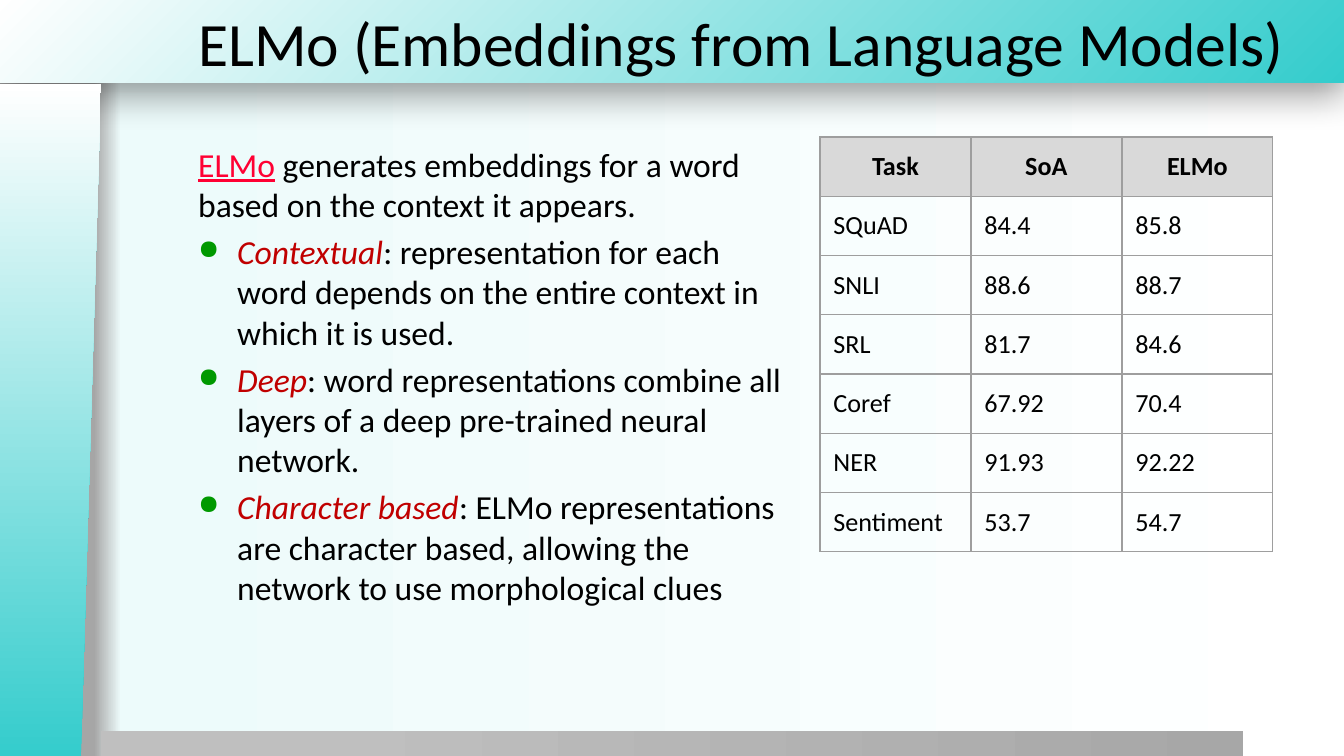
import dataclasses

import lxml.etree
import pptx
import pptx.dml.color
import pptx.enum.shapes
import pptx.enum.text
import pptx.oxml
import pptx.oxml.ns
import pptx.util

WIDE, HIGH = 1344, 756
SCALE = 9144000 / WIDE
NS = pptx.oxml.ns.nsdecls("a")
TAG = pptx.oxml.ns.qn
SHAPE = pptx.enum.shapes.MSO_SHAPE
ALIGN = pptx.enum.text.PP_ALIGN
ANCHOR = pptx.enum.text.MSO_ANCHOR


@dataclasses.dataclass(frozen=True)
class Theme:
    font: str = "Calibri"
    title: int = 33
    body: int = 18
    cell: int = 14
    gap: float = 3.6
    rule: float = 0.75
    ink: str = "000000"
    link: str = "FF0033"
    term: str = "C00000"
    dot: str = "009900"
    head: str = "D9D9D9"
    grid: str = "9E9E9E"
    teal: str = "34CCCC"
    white: str = "FFFFFF"
    mist: str = "EDFBFB"
    shade: str = "A6A6A6"
    base: tuple = ("BFBFBF", "A7A7A7")


THEME = Theme()

POINTS = [
    ("Contextual", ": representation for each word depends on the entire context in which it is used."),
    ("Deep", ": word representations combine all layers of a deep pre-trained neural network."),
    ("Character based", ": ELMo representations are character based, "
                        "allowing the network to use morphological clues"),
]

SCORES = [
    ("Task", "SoA", "ELMo"),
    ("SQuAD", "84.4", "85.8"),
    ("SNLI", "88.6", "88.7"),
    ("SRL", "81.7", "84.6"),
    ("Coref", "67.92", "70.4"),
    ("NER", "91.93", "92.22"),
    ("Sentiment", "53.7", "54.7"),
]


def px(count):
    return pptx.util.Emu(round(count * SCALE))


def box(*sides):
    return [px(side) for side in sides]


def color(code):
    return pptx.dml.color.RGBColor.from_string(code)


def add_xml(parent, text):
    parent.append(pptx.oxml.parse_xml(text))


def blend(owner, stops, corner=False):
    """Swap the owner's solid fill for a gradient, left to right or from the lower right corner."""
    marks = "".join(f'<a:gs pos="{spot * 1000}"><a:srgbClr val="{code}"/></a:gs>'
                    for spot, code in stops)
    course = ('<a:path path="circle"><a:fillToRect l="100000" t="100000"/></a:path>'
              if corner else '<a:lin ang="0" scaled="0"/>')
    fill = pptx.oxml.parse_xml(f'<a:gradFill {NS} rotWithShape="1"><a:gsLst>{marks}</a:gsLst>'
                               f'{course}</a:gradFill>')
    owner.replace(owner.find(TAG("a:solidFill")), fill)


def add_band(slide, kind, sides, stops, corner=False):
    band = slide.shapes.add_shape(kind, *box(*sides))
    band.shadow.inherit = False
    band.line.fill.background()
    band.fill.solid()
    blend(band._element.spPr, stops, corner)
    return band


def cast_shade(band):
    effects = band._element.spPr.find(TAG("a:effectLst"))
    add_xml(effects, f'<a:outerShdw {NS} blurRad="{pptx.util.Pt(20)}" dist="{pptx.util.Pt(6)}" '
                     f'dir="5400000" algn="t" rotWithShape="0"><a:srgbClr val="{THEME.ink}">'
                     '<a:alpha val="40000"/></a:srgbClr></a:outerShdw>')


def add_run(para, text, size, code=THEME.ink, **style):
    run = para.add_run()
    run.text = text
    run.font.name = THEME.font
    run.font.size = pptx.util.Pt(size)
    run.font.color.rgb = color(code)
    for name, value in style.items():
        setattr(run.font, name, value)


def add_text(slide, *sides, anchor=ANCHOR.TOP):
    frame = slide.shapes.add_textbox(*box(*sides)).text_frame
    frame.word_wrap = True
    frame.vertical_anchor = anchor
    return frame


def add_dot(para):
    props = para._p.get_or_add_pPr()
    props.set("marL", str(px(39)))
    props.set("indent", str(px(-39)))
    add_xml(props, f'<a:buClr {NS}><a:srgbClr val="{THEME.dot}"/></a:buClr>')
    add_xml(props, f'<a:buSzPct {NS} val="80000"/>')
    add_xml(props, f'<a:buChar {NS} char="●"/>')


def add_body(slide):
    frame = add_text(slide, 185, 137, 610, 568)
    lead = frame.paragraphs[0]
    lead.space_before = pptx.util.Pt(THEME.gap)
    add_run(lead, "ELMo", THEME.body, THEME.link, underline=True)
    add_run(lead, " generates embeddings for a word based on the context it appears.", THEME.body)
    for term, rest in POINTS:
        para = frame.add_paragraph()
        para.space_before = pptx.util.Pt(THEME.gap)
        add_dot(para)
        add_run(para, term, THEME.body, THEME.term, italic=True)
        add_run(para, rest, THEME.body)


def set_cell(cell, text, head):
    cell.vertical_anchor = ANCHOR.MIDDLE
    for side in ("lnL", "lnR", "lnT", "lnB"):
        add_xml(cell._tc.get_or_add_tcPr(),
                f'<a:{side} {NS} w="{pptx.util.Pt(THEME.rule)}"><a:solidFill>'
                f'<a:srgbClr val="{THEME.grid}"/></a:solidFill></a:{side}>')
    if head:
        cell.fill.solid()
        cell.fill.fore_color.rgb = color(THEME.head)
    else:
        cell.fill.background()
    para = cell.text_frame.paragraphs[0]
    para.alignment = ALIGN.CENTER if head else ALIGN.LEFT
    add_run(para, text, THEME.cell, bold=head)


def add_scores(slide):
    table = slide.shapes.add_table(len(SCORES), len(SCORES[0]), *box(820, 137, 453, 415)).table
    table.first_row = table.horz_banding = False
    for row, texts in enumerate(SCORES):
        for col, text in enumerate(texts):
            set_cell(table.cell(row, col), text, row == 0)


def add_frame(slide):
    """Paint the backdrop and the bands along its edges."""
    slide.background.fill.solid()
    blend(slide._element.cSld.bg.bgPr, [(7, THEME.shade), (9, THEME.mist), (100, THEME.white)])
    fade = [(0, THEME.teal), (100, THEME.white)]
    cast_shade(add_band(slide, SHAPE.RECTANGLE, (-1, 0, 1345, 83), fade, corner=True))
    add_band(slide, SHAPE.RECTANGLE, (101, 731, 1142, 27), list(zip((20, 100), THEME.base)))
    side = add_band(slide, SHAPE.FLOWCHART_MANUAL_INPUT, (-286, 370, 673, 101), fade)
    side.rotation = 270
    side._element.spPr.find(TAG("a:xfrm")).set("flipV", "1")


def main():
    deck = pptx.Presentation()
    deck.slide_width, deck.slide_height = box(WIDE, HIGH)
    slide = deck.slides.add_slide(deck.slide_layouts[6])
    add_frame(slide)
    title = add_text(slide, 185, 0, 1159, 83, anchor=ANCHOR.MIDDLE)
    add_run(title.paragraphs[0], "ELMo (Embeddings from Language Models)", THEME.title)
    add_body(slide)
    add_scores(slide)
    deck.save("out.pptx")


if __name__ == "__main__":
    main()
